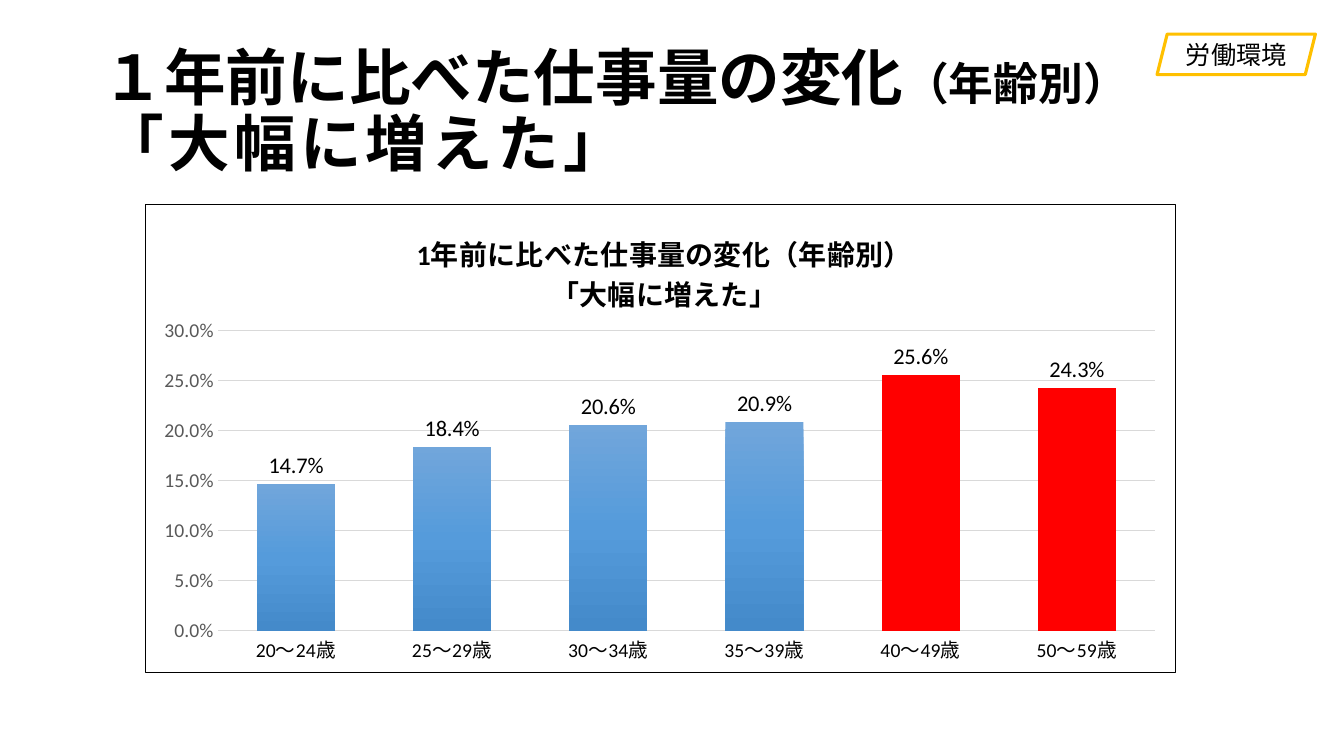
from lxml.etree import SubElement
from pptx import Presentation
from pptx.chart.data import CategoryChartData
from pptx.dml.color import RGBColor
from pptx.enum.chart import XL_CHART_TYPE, XL_LABEL_POSITION, XL_TICK_MARK
from pptx.enum.lang import MSO_LANGUAGE_ID
from pptx.enum.shapes import MSO_SHAPE
from pptx.enum.text import MSO_ANCHOR, PP_ALIGN
from pptx.oxml import parse_xml
from pptx.oxml.ns import nsdecls, qn
from pptx.util import Cm, Pt

# Content
HEADING_LINES = [
    [("１年前に比べた仕事量の変化", 44, 0), ("（年齢別）", 32, 0)],
    [("「大幅に増えた」", 44, 3)],
]
TAG_TEXT = "労働環境"
CHART_TITLE = ["1年前に比べた仕事量の変化（年齢別）", "「大幅に増えた」"]
INCREASE_BY_AGE = {
    "20～24歳": 0.147, "25～29歳": 0.184, "30～34歳": 0.206,
    "35～39歳": 0.209, "40～49歳": 0.256, "50～59歳": 0.243,
}
HIGHLIGHTED_AGES = ["40～49歳", "50～59歳"]

# Format
FONT = "Calibri"
PERCENT = "0.0%"
BLACK = RGBColor(0x00, 0x00, 0x00)
GRAY = RGBColor(0x59, 0x59, 0x59)
LIGHT_GRAY = RGBColor(0xD9, 0xD9, 0xD9)
RED = RGBColor(0xFF, 0x00, 0x00)
AMBER = RGBColor(0xFF, 0xC0, 0x00)
BAR_GRADIENT = [
    (0, RGBColor(0x71, 0xA6, 0xDB)),
    (50, RGBColor(0x55, 0x9B, 0xDB)),
    (100, RGBColor(0x44, 0x8A, 0xCA)),
]

# Places: left, top, width, height in centimetres
HEADING_BOX = (2.34, 1.02, 29.21, 3.68)
TAG_BOX = (29.16, 0.86, 3.99, 1.02)
CHART_BOX = (3.66, 5.13, 25.98, 11.84)
# Fractions of the chart area
PLOT_LAYOUT = {"x": 0.07, "y": 0.27, "w": 0.91, "h": 0.64}
TITLE_LAYOUT = {"x": 0.26, "y": 0.05}


def place(box):
    return [Cm(length) for length in box]


def format_font(font, size, color=BLACK, bold=False):
    values = {"name": FONT, "size": Pt(size), "bold": bold,
              "language_id": MSO_LANGUAGE_ID.JAPANESE}
    for attribute, value in values.items():
        setattr(font, attribute, value)
    font.color.rgb = color


def manual_layout(fractions, inner=False):
    layout = parse_xml(f"<c:layout {nsdecls('c')}><c:manualLayout/></c:layout>")
    entries = {"layoutTarget": "inner"} if inner else {}
    entries.update({f"{name}Mode": "edge" for name in ("x", "y")})
    entries.update(fractions)
    for name, value in entries.items():
        SubElement(layout[0], qn(f"c:{name}")).set("val", str(value))
    return layout


def replace_layout(parent, layout, position):
    for present in parent.findall(qn("c:layout")):
        parent.remove(present)
    parent.insert(position, layout)


def add_heading(slide):
    frame = slide.shapes.add_textbox(*place(HEADING_BOX)).text_frame
    frame.word_wrap = True
    frame.vertical_anchor = MSO_ANCHOR.MIDDLE
    paragraph = frame.paragraphs[0]
    paragraph.line_spacing = 0.9
    for number, line in enumerate(HEADING_LINES):
        if number:
            paragraph.add_line_break()
        for text, size, spacing in line:
            run = paragraph.add_run()
            run.text = text
            format_font(run.font, size, bold=True)
            if spacing:
                run.font._element.set("spc", str(spacing * 100))


def add_tag(slide):
    tag = slide.shapes.add_shape(MSO_SHAPE.PARALLELOGRAM, *place(TAG_BOX))
    tag.shadow.inherit = False
    tag.fill.background()
    tag.line.color.rgb = AMBER
    tag.line.width = Pt(2.25)
    frame = tag.text_frame
    frame.word_wrap = False
    frame.vertical_anchor = MSO_ANCHOR.MIDDLE
    paragraph = frame.paragraphs[0]
    paragraph.alignment = PP_ALIGN.CENTER
    run = paragraph.add_run()
    run.text = TAG_TEXT
    format_font(run.font, 18)


def format_title(chart):
    frame = chart.chart_title.text_frame
    for number, text in enumerate(CHART_TITLE):
        paragraph = frame.add_paragraph() if number else frame.paragraphs[0]
        run = paragraph.add_run()
        run.text = text
        format_font(run.font, 20, bold=True)
    replace_layout(chart.chart_title._element, manual_layout(TITLE_LAYOUT), 1)


def format_axes(chart):
    for axis, color in ((chart.category_axis, BLACK), (chart.value_axis, GRAY)):
        axis.major_tick_mark = axis.minor_tick_mark = XL_TICK_MARK.NONE
        format_font(axis.tick_labels.font, 14, color)
    category_line = chart.category_axis.format.line
    category_line.color.rgb = LIGHT_GRAY
    category_line.width = Pt(1)

    value_axis = chart.value_axis
    scale = {"minimum_scale": 0, "maximum_scale": 0.3, "major_unit": 0.05}
    for attribute, value in scale.items():
        setattr(value_axis, attribute, value)
    value_axis.format.line.fill.background()
    value_axis.tick_labels.number_format = PERCENT
    value_axis.tick_labels.number_format_is_linked = False
    grid_line = value_axis.major_gridlines.format.line
    grid_line.color.rgb = LIGHT_GRAY
    grid_line.width = Pt(0.75)


def format_bars(plot):
    for attribute, value in {"vary_by_categories": False, "gap_width": 100,
                             "overlap": -24, "has_data_labels": True}.items():
        setattr(plot, attribute, value)
    labels = plot.data_labels
    for attribute, value in {"show_value": True, "number_format": PERCENT,
                             "number_format_is_linked": False,
                             "position": XL_LABEL_POSITION.OUTSIDE_END}.items():
        setattr(labels, attribute, value)
    format_font(labels.font, 16)

    # Three-stop vertical gradient, with red for the highlighted ages
    series = plot.series[0]
    series.invert_if_negative = False
    stops = "".join(f'<a:gs pos="{percent * 1000}"><a:srgbClr val="{color}"/></a:gs>'
                    for percent, color in BAR_GRADIENT)
    series.format.fill.background()
    properties = series._element.find(qn("c:spPr"))
    properties.replace(properties[0], parse_xml(
        f"<a:gradFill {nsdecls('a')}><a:gsLst>{stops}</a:gsLst>"
        '<a:lin ang="5400000" scaled="0"/></a:gradFill>'))
    for index, age in enumerate(INCREASE_BY_AGE):
        if age in HIGHLIGHTED_AGES:
            fill = series.points[index].format.fill
            fill.solid()
            fill.fore_color.rgb = RED


def add_chart(slide):
    data = CategoryChartData(number_format=PERCENT)
    data.categories = list(INCREASE_BY_AGE)
    data.add_series("Series 1", list(INCREASE_BY_AGE.values()))
    chart = slide.shapes.add_chart(
        XL_CHART_TYPE.COLUMN_CLUSTERED, *place(CHART_BOX), data).chart
    chart.has_legend = False
    format_font(chart.font, 10)
    format_title(chart)
    format_axes(chart)
    format_bars(chart.plots[0])

    # Plot position and outer border
    chart_element = chart._chartSpace.find(qn("c:chart"))
    replace_layout(chart_element.find(qn("c:plotArea")),
                   manual_layout(PLOT_LAYOUT, inner=True), 0)
    chart_element.addnext(parse_xml(
        f"<c:spPr {nsdecls('c', 'a')}><a:noFill/><a:ln w=\"{Pt(0.75)}\"><a:solidFill>"
        f'<a:srgbClr val="{BLACK}"/></a:solidFill></a:ln></c:spPr>'))


def main():
    presentation = Presentation()
    presentation.slide_width, presentation.slide_height = Cm(33.87), Cm(19.05)
    slide = presentation.slides.add_slide(presentation.slide_layouts[6])
    add_heading(slide)
    add_tag(slide)
    add_chart(slide)
    presentation.save("out.pptx")


if __name__ == "__main__":
    main()
